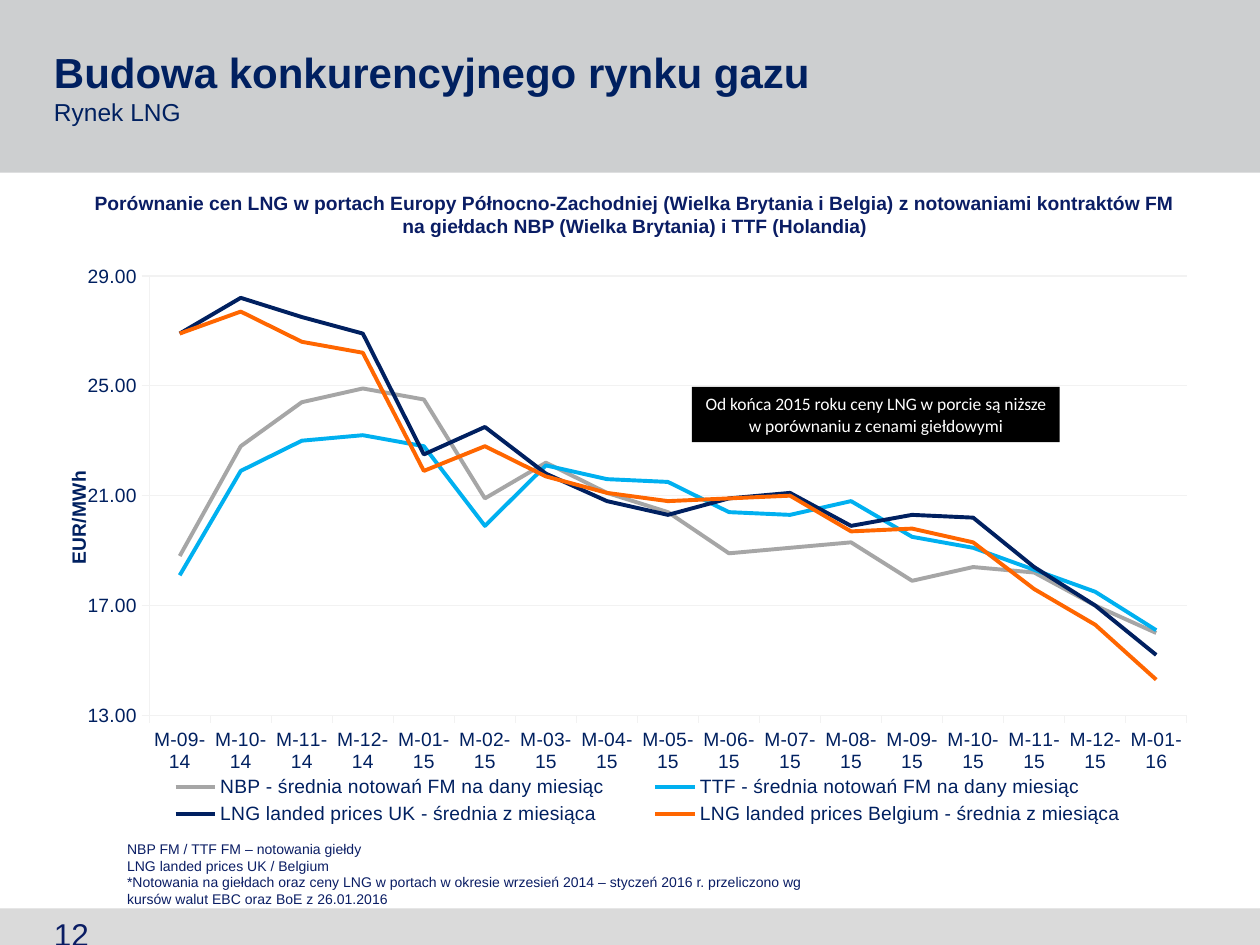
from lxml import etree
from pptx import Presentation
from pptx.chart.data import CategoryChartData
from pptx.dml.color import RGBColor
from pptx.enum.chart import XL_CHART_TYPE, XL_LEGEND_POSITION, XL_TICK_MARK
from pptx.enum.shapes import MSO_SHAPE
from pptx.enum.text import MSO_ANCHOR, PP_ALIGN
from pptx.oxml.ns import qn
from pptx.util import Inches, Pt

LINE_CHART = XL_CHART_TYPE.LINE
LEGEND_BOTTOM = XL_LEGEND_POSITION.BOTTOM
TICK_OUTSIDE = XL_TICK_MARK.OUTSIDE
RECTANGLE = MSO_SHAPE.RECTANGLE
MIDDLE = MSO_ANCHOR.MIDDLE
TOP = MSO_ANCHOR.TOP
LEFT = PP_ALIGN.LEFT
CENTER = PP_ALIGN.CENTER

COLORS = {
    "header": "CDCFD0",
    "footer": "DADADA",
    "navy": "002060",
    "ink": "0A1D64",
    "grid": "F2F2F2",
    "black": "000000",
    "white": "FFFFFF",
    "gray": "A6A6A6",
    "sky": "00B0F0",
    "orange": "FF6600",
}

MONTHS = [f"M-{month:02d}-{year}"
          for year, first, last in ((14, 9, 12), (15, 1, 12), (16, 1, 1))
          for month in range(first, last + 1)]

PRICES = [
    ("NBP - średnia notowań FM na dany miesiąc", "gray",
     [18.8, 22.8, 24.4, 24.9, 24.5, 20.9, 22.2, 21.1, 20.4,
      18.9, 19.1, 19.3, 17.9, 18.4, 18.2, 17, 16]),
    ("TTF - średnia notowań FM na dany miesiąc", "sky",
     [18.1, 21.9, 23, 23.2, 22.8, 19.9, 22.1, 21.6, 21.5,
      20.4, 20.3, 20.8, 19.5, 19.1, 18.3, 17.5, 16.1]),
    ("LNG landed prices UK - średnia z miesiąca", "navy",
     [26.9, 28.2, 27.5, 26.9, 22.5, 23.5, 21.8, 20.8, 20.3,
      20.9, 21.1, 19.9, 20.3, 20.2, 18.4, 17, 15.2]),
    ("LNG landed prices Belgium - średnia z miesiąca", "orange",
     [26.9, 27.7, 26.6, 26.2, 21.9, 22.8, 21.7, 21.1, 20.8,
      20.9, 21, 19.7, 19.8, 19.3, 17.6, 16.3, 14.3]),
]

NOTES = [
    "NBP FM / TTF FM – notowania giełdy",
    "LNG landed prices UK / Belgium",
    "*Notowania na giełdach oraz ceny LNG w portach w okresie wrzesień 2014 – "
    "styczeń 2016 r. przeliczono wg kursów walut EBC oraz BoE z 26.01.2016",
]


def color(name):
    return RGBColor.from_string(COLORS[name])


def set_font(font, size, color_name, bold=False, name="Arial"):
    font.name = name
    font.size = Pt(size)
    font.bold = bold
    font.color.rgb = color(color_name)


def add_band(page, left, top, width, height, fill):
    band = page.shapes.add_shape(
        RECTANGLE, Inches(left), Inches(top), Inches(width), Inches(height))
    band.shadow.inherit = False
    band.fill.solid()
    band.fill.fore_color.rgb = color(fill)
    band.line.fill.background()
    return band


def write(box, lines, size, color_name, bold=False, align=LEFT, anchor=TOP, name="Arial"):
    frame = box.text_frame
    frame.word_wrap = True
    frame.vertical_anchor = anchor
    for index, line in enumerate(lines):
        para = frame.add_paragraph() if index else frame.paragraphs[0]
        para.text = line
        para.alignment = align
        for span in para.runs:
            set_font(span.font, size, color_name, bold, name)


def add_text(page, left, top, width, height, lines, size, color_name, **style):
    box = page.shapes.add_textbox(
        Inches(left), Inches(top), Inches(width), Inches(height))
    write(box, lines, size, color_name, **style)
    return box


def place(element, index, inner=False, **fractions):
    for old in element.findall(qn("c:layout")):
        element.remove(old)
    layout = etree.Element(qn("c:layout"))
    manual = etree.SubElement(layout, qn("c:manualLayout"))
    if inner:
        etree.SubElement(manual, qn("c:layoutTarget")).set("val", "inner")
    for side in ("x", "y"):
        etree.SubElement(manual, qn(f"c:{side}Mode")).set("val", "edge")
    for side, value in fractions.items():
        etree.SubElement(manual, qn(f"c:{side}")).set("val", str(value))
    element.insert(index, layout)


def style_axes(chart):
    prices = chart.value_axis
    prices.minimum_scale = 13
    prices.maximum_scale = 29
    prices.major_unit = 4
    prices.tick_labels.number_format = "0.00"
    prices.tick_labels.number_format_is_linked = False
    prices.major_gridlines.format.line.color.rgb = color("grid")
    for axis in (prices, chart.category_axis):
        axis.major_tick_mark = TICK_OUTSIDE
        axis.format.line.color.rgb = color("grid")
        set_font(axis.tick_labels.font, 11, "navy")
    frame = prices.axis_title.text_frame
    frame.text = "EUR/MWh"
    set_font(frame.paragraphs[0].runs[0].font, 11, "navy", bold=True)
    frame._txBody.find(qn("a:bodyPr")).set("rot", "-5400000")
    place(prices.axis_title._element, 1, x=0.01, y=0.37)


def add_price_chart(page):
    data = CategoryChartData(number_format="0.00")
    data.categories = MONTHS
    for name, _, values in PRICES:
        data.add_series(name, values)
    chart = page.shapes.add_chart(
        LINE_CHART, Inches(0.4), Inches(1.99), Inches(9.12), Inches(4.64), data).chart
    chart.has_title = False
    set_font(chart.font, 11, "navy")
    chart.plots[0].vary_by_categories = False
    for series, (_, color_name, _) in zip(chart.plots[0].series, PRICES):
        series.smooth = False
        series.format.line.color.rgb = color(color_name)
        series.format.line.width = Pt(2.25)
    style_axes(chart)
    chart.has_legend = True
    chart.legend.position = LEGEND_BOTTOM
    chart.legend.include_in_layout = False
    set_font(chart.legend.font, 11, "navy")
    place(chart.legend._element, 1, x=0.07, y=0.89, w=0.9, h=0.1)
    plot_area = chart._chartSpace.find(qn("c:chart")).find(qn("c:plotArea"))
    place(plot_area, 0, inner=True, x=0.086, y=0.043, w=0.903, h=0.752)


def main():
    deck = Presentation()
    deck.slide_width = Inches(10)
    deck.slide_height = Inches(7.5)
    page = deck.slides.add_slide(deck.slide_layouts[6])

    add_band(page, 0, 0, 10, 1.37, "header")
    add_band(page, 0, 7.21, 10, 0.29, "footer")

    title = add_text(page, 0.33, 0.17, 7.9, 1.03,
                     ["Budowa konkurencyjnego rynku gazu\nRynek LNG"],
                     24, "navy", bold=True, anchor=MIDDLE)
    set_font(title.text_frame.paragraphs[0].runs[1].font, 14, "navy")

    add_price_chart(page)
    add_text(page, 0.91, 6.62, 5.68, 0.64, NOTES, 8, "ink")

    callout = add_band(page, 5.49, 3.07, 2.92, 0.44, "black")
    write(callout,
          ["Od końca 2015 roku ceny LNG w porcie są niższe\nw porównaniu z cenami giełdowymi"],
          10, "white", align=CENTER, anchor=MIDDLE, name="Calibri")

    add_text(page, 0.44, 1.47, 9.2, 0.47,
             ["Porównanie cen LNG w portach Europy Północno-Zachodniej (Wielka Brytania i Belgia) "
              "z notowaniami kontraktów FM\nna giełdach NBP (Wielka Brytania) i TTF (Holandia)"],
             11, "ink", bold=True, align=CENTER)
    add_text(page, 0.33, 7.21, 0.75, 0.16, ["12"], 18, "ink")

    deck.save("out.pptx")


if __name__ == "__main__":
    main()
